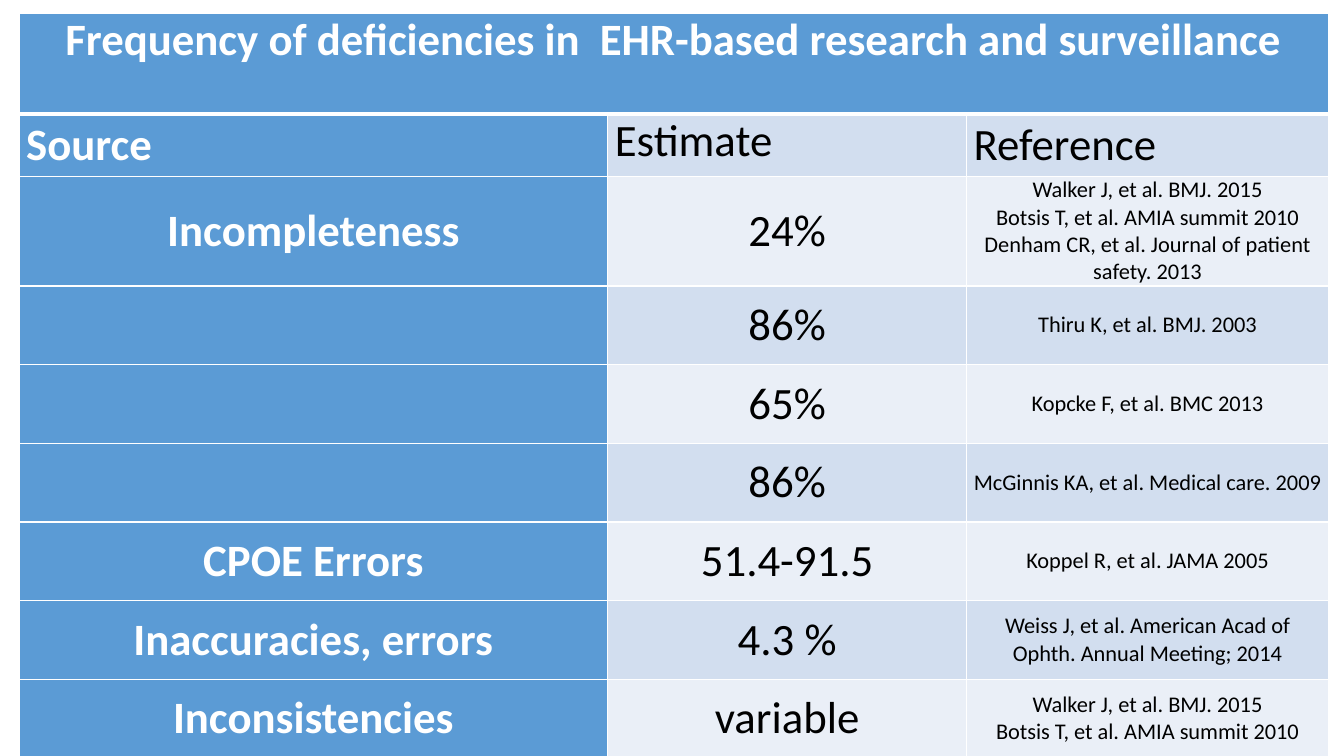
import pptx
import pptx.dml.color
import pptx.enum.text
import pptx.oxml
import pptx.oxml.ns
import pptx.util

Pt = pptx.util.Pt
RGBColor = pptx.dml.color.RGBColor
Align = pptx.enum.text.PP_ALIGN
Anchor = pptx.enum.text.MSO_ANCHOR

BLUE = RGBColor(0x5B, 0x9B, 0xD5)
BAND_DARK = RGBColor(0xD2, 0xDE, 0xEF)
BAND_LIGHT = RGBColor(0xEA, 0xEF, 0xF7)
WHITE = RGBColor(0xFF, 0xFF, 0xFF)
BLACK = RGBColor(0, 0, 0)

TITLE = "Frequency of deficiencies in  EHR-based research and surveillance"
HEADINGS = ("Source", "Estimate", "Reference")
FINDINGS = [
    ("Incompleteness", "24%",
     "Walker J, et al. BMJ. 2015\nBotsis T, et al. AMIA summit 2010\n"
     "Denham CR, et al. Journal of patient safety. 2013"),
    ("", "86%", "Thiru K, et al. BMJ. 2003"),
    ("", "65%", "Kopcke F, et al. BMC 2013"),
    ("", "86%", "McGinnis KA, et al. Medical care. 2009"),
    ("CPOE Errors", "51.4-91.5", "Koppel R, et al. JAMA 2005"),
    ("Inaccuracies, errors", "4.3 %",
     "Weiss J, et al. American Acad of Ophth. Annual Meeting; 2014"),
    ("Inconsistencies", "variable",
     "Walker J, et al. BMJ. 2015\nBotsis T, et al. AMIA summit 2010"),
]
COLUMN_WIDTHS = (420.5, 256.3, 258.5)
ROW_HEIGHTS = [72, 44.6] + [56.2] * len(FINDINGS)


class SlideBuilder:
    font_name = "Calibri"
    large, small = 32, 16
    side_margin = 5

    def __init__(self, slide):
        self.slide = slide

    def table(self, left, top, widths, heights):
        frame = self.slide.shapes.add_table(
            len(heights), len(widths), Pt(left), Pt(top),
            Pt(sum(widths)), Pt(sum(heights)))
        grid = frame.table
        grid.first_row = grid.horz_banding = False
        for column, width in zip(grid.columns, widths):
            column.width = Pt(width)
        for row, height in zip(grid.rows, heights):
            row.height = Pt(height)
        return grid

    def borders(self, cell, top=1, bottom=1):
        properties = cell._tc.get_or_add_tcPr()
        for side, width in (("L", 1), ("R", 1), ("T", top), ("B", bottom)):
            properties.append(pptx.oxml.parse_xml(
                f'<a:ln{side} {pptx.oxml.ns.nsdecls("a")} w="{Pt(width)}">'
                f'<a:solidFill><a:srgbClr val="{WHITE}"/></a:solidFill>'
                f'</a:ln{side}>'))

    def cell(self, cell, text, fill, size=large, align=Align.CENTER,
             anchor=Anchor.MIDDLE, top=1, bottom=1):
        self.borders(cell, top, bottom)
        cell.fill.solid()
        cell.fill.fore_color.rgb = fill
        cell.margin_left = cell.margin_right = Pt(self.side_margin)
        cell.margin_top = cell.margin_bottom = Pt(0)
        cell.vertical_anchor = anchor
        cell.text_frame.text = text
        for paragraph in cell.text_frame.paragraphs:
            paragraph.alignment = align
            font = paragraph.font
            for target in [font] + [run.font for run in paragraph.runs]:
                target.name = self.font_name
                target.size = Pt(size)
                target.bold = fill == BLUE
                target.color.rgb = WHITE if fill == BLUE else BLACK


def main():
    deck = pptx.Presentation()
    deck.slide_width, deck.slide_height = Pt(960), Pt(540)
    builder = SlideBuilder(deck.slides.add_slide(deck.slide_layouts[6]))
    deficiencies = builder.table(13.7, 9.4, COLUMN_WIDTHS, ROW_HEIGHTS)

    # Title across all columns
    deficiencies.cell(0, 0).merge(deficiencies.cell(0, 2))
    for column in range(3):
        builder.cell(deficiencies.cell(0, column), "" if column else TITLE,
                     BLUE, anchor=Anchor.TOP, bottom=3)

    # Column headings
    for column, heading in enumerate(HEADINGS):
        builder.cell(deficiencies.cell(1, column), heading,
                     BAND_DARK if column else BLUE, align=Align.JUSTIFY,
                     anchor=Anchor.TOP if heading == "Estimate" else Anchor.MIDDLE,
                     top=3)

    # Findings in alternating bands
    for row, finding in enumerate(FINDINGS, start=2):
        band = BAND_DARK if row % 2 else BAND_LIGHT
        for column, text in enumerate(finding):
            builder.cell(deficiencies.cell(row, column), text,
                         band if column else BLUE,
                         size=builder.small if column == 2 else builder.large)

    deck.save("out.pptx")


if __name__ == "__main__":
    main()
